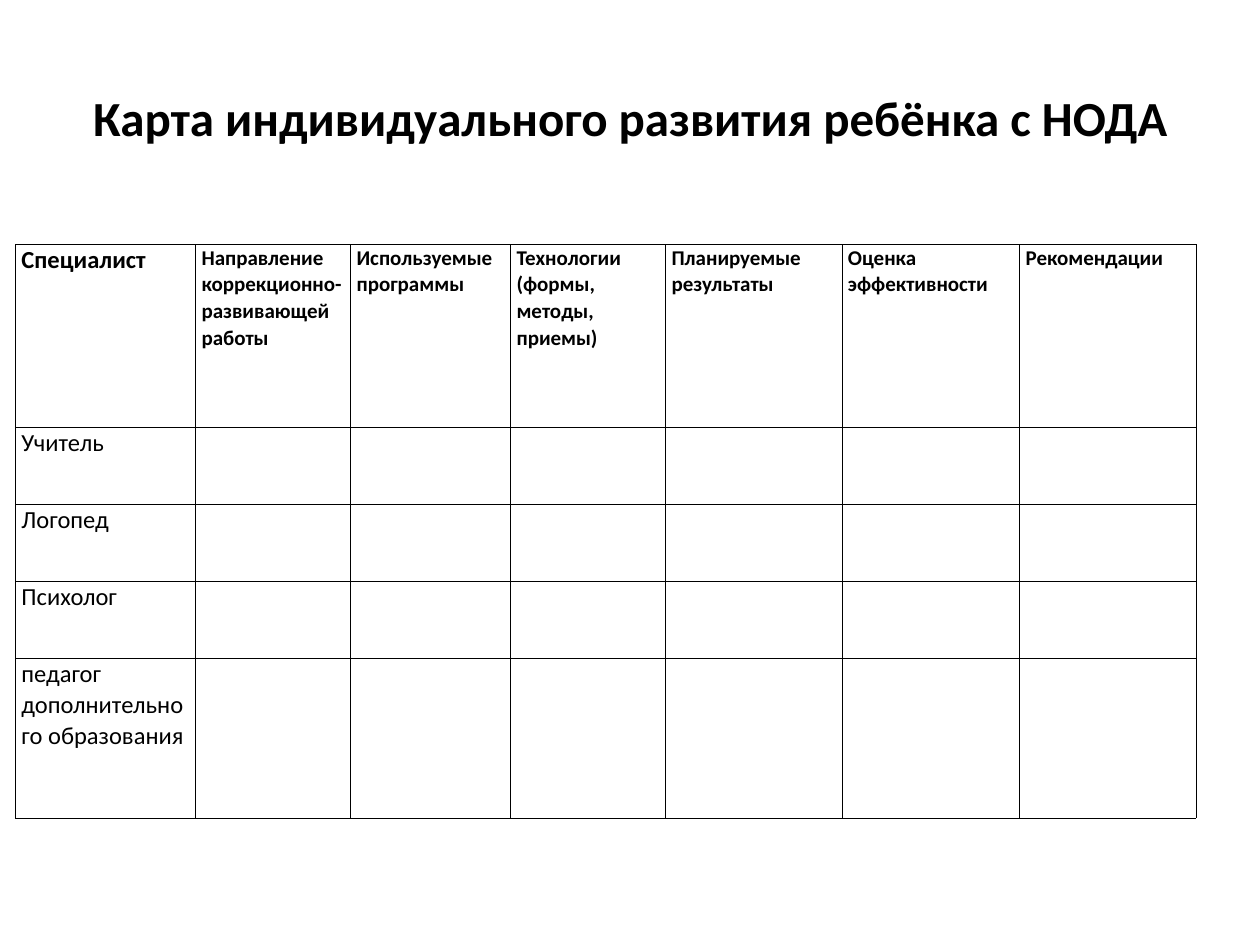
"""Build a slide with a child's individual development chart."""
from dataclasses import dataclass

from lxml.etree import SubElement
from pptx import Presentation
from pptx.dml.color import RGBColor as RGB
from pptx.enum.text import MSO_ANCHOR as ANCHOR, PP_ALIGN as ALIGN
from pptx.oxml.ns import qn
from pptx.util import Inches, Pt


@dataclass(frozen=True)
class Theme:
    font: str = "Calibri"
    ink: RGB = RGB(0, 0, 0)
    title: int = 28
    label: int = 14
    heading: int = 12
    border: float = 0.06
    spacing: float = 1.04


def apply(obj, values):
    for name, value in values.items():
        setattr(obj, name, value)


class SlideBuilder:
    def __init__(self, slide, theme):
        self.s, self.theme = slide, theme

    def text(self, tf, text, size, bold, **para):
        p = tf.paragraphs[0]
        apply(p, para)
        r = p.add_run()
        r.text = text
        apply(r.font, {"name": self.theme.font, "size": Pt(size), "bold": bold})
        r.font.color.rgb = self.theme.ink

    def title(self, text, box):
        sp = self.s.shapes.add_textbox(*map(Inches, box))
        tf = sp.text_frame
        apply(tf, {"word_wrap": True, "vertical_anchor": ANCHOR.MIDDLE})
        self.text(tf, text, self.theme.title, True, alignment=ALIGN.CENTER)

    def borders(self, cell):
        tc_pr = cell._tc.get_or_add_tcPr()
        for side in ("lnL", "lnR", "lnT", "lnB"):
            ln = SubElement(tc_pr, qn(f"a:{side}"), w=str(Pt(self.theme.border)))
            fill = SubElement(ln, qn("a:solidFill"))
            SubElement(fill, qn("a:srgbClr"), val=str(self.theme.ink))

    def table(self, left, top, widths, heights, headings, labels):
        box = map(Inches, (left, top, sum(widths), sum(heights)))
        tbl = self.s.shapes.add_table(len(heights), len(widths), *box).table
        apply(tbl, {"first_row": False, "horz_banding": False})
        for col, width in zip(tbl.columns, widths):
            col.width = Inches(width)
        for row, height in zip(tbl.rows, heights):
            row.height = Inches(height)
        margins = {"margin_left": Inches(0.05), "margin_right": Inches(0.05),
                   "margin_top": 0, "margin_bottom": 0}
        for cell in tbl.iter_cells():
            apply(cell, margins)
            self.borders(cell)
            cell.fill.background()
        for j, text in enumerate(headings):
            size = self.theme.heading if j else self.theme.label
            self.text(tbl.cell(0, j).text_frame, text, size, True,
                      line_spacing=self.theme.spacing)
        for i, text in enumerate(labels, 1):
            self.text(tbl.cell(i, 0).text_frame, text, self.theme.label, False,
                      line_spacing=self.theme.spacing)


def main():
    prs = Presentation()
    apply(prs, {"slide_width": Inches(10), "slide_height": Inches(7.5)})
    builder = SlideBuilder(prs.slides.add_slide(prs.slide_layouts[6]), Theme())
    builder.title("Карта индивидуального развития ребёнка с НОДА", (0.5, 0.3, 9, 1.25))
    builder.table(
        0.12, 1.94,
        widths=(1.43, 1.23, 1.27, 1.23, 1.4, 1.41, 1.4),
        heights=(1.45, 0.61, 0.61, 0.61, 1.27),
        headings=("Специалист", "Направление коррекционно-развивающей работы",
                  "Используемые программы", "Технологии (формы, методы, приемы)",
                  "Планируемые результаты", "Оценка эффективности", "Рекомендации"),
        labels=("Учитель", "Логопед", "Психолог", "педагог дополнительного образования"),
    )
    prs.save("out.pptx")


if __name__ == "__main__":
    main()
